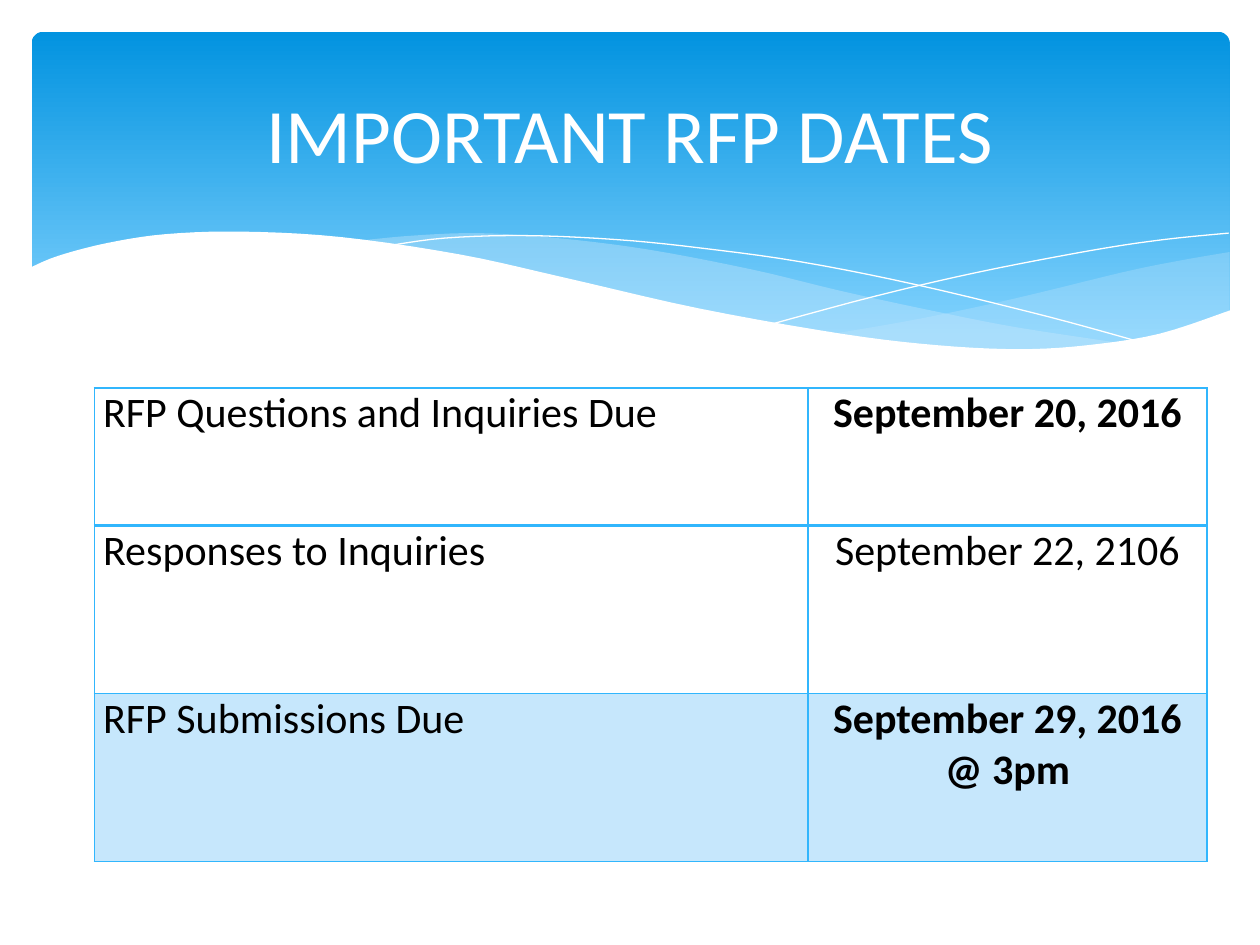
import pptx
import pptx.util
import pptx.dml.color
import pptx.enum.shapes
import pptx.enum.text
import pptx.oxml
import pptx.oxml.ns
from dataclasses import dataclass

Cm = pptx.util.Cm
Pt = pptx.util.Pt
RGB = pptx.dml.color.RGBColor.from_string
ALIGN = pptx.enum.text.PP_ALIGN
ANCHOR = pptx.enum.text.MSO_ANCHOR
NS = pptx.oxml.ns.nsdecls("a")


@dataclass(frozen=True)
class Theme:
    font: str = "Calibri"
    title_size: int = 44
    cell_size: int = 24
    sky_top: str = "0293E0"
    sky_bottom: str = "83D3FE"
    pale: str = "C6E7FC"
    white: str = "FFFFFF"
    black: str = "000000"
    border: str = "31B6FD"
    thin: float = 1
    thick: float = 2


def assign(obj, values):
    for name, value in values.items():
        setattr(obj, name, value)


def smooth(knots, steps=5):
    padded = [knots[0], *knots, knots[-1]]
    points = [knots[0]]
    for a, b, c, d in zip(padded, padded[1:], padded[2:], padded[3:]):
        for i in range(1, steps + 1):
            t = i / steps
            points.append(tuple(
                0.5 * (2 * q + (r - p) * t + (2 * p - 5 * q + 4 * r - s) * t ** 2
                       + (3 * q - p - 3 * r + s) * t ** 3)
                for p, q, r, s in zip(a, b, c, d)))
    return points


class SlideBuilder:
    def __init__(self, slide, theme):
        self.slide = slide
        self.theme = theme

    def label(self, tf, text, size, color, bold=False, align=ALIGN.LEFT):
        p = tf.paragraphs[0]
        p.alignment = align
        r = p.add_run()
        r.text = text
        assign(r.font, {"name": self.theme.font, "size": Pt(size), "bold": bold})
        r.font.color.rgb = RGB(color)

    def banner(self, left, top, width, height):
        sp = self.slide.shapes.add_shape(
            pptx.enum.shapes.MSO_SHAPE.ROUNDED_RECTANGLE,
            Cm(left), Cm(top), Cm(width), Cm(height))
        sp.adjustments[0] = 0.034
        sp.shadow.inherit = False
        sp.line.fill.background()
        sp.fill.gradient()
        sp.fill.gradient_angle = 270
        stops = [(0, self.theme.sky_top), (0.9, self.theme.sky_bottom)]
        for stop, (position, color) in zip(sp.fill.gradient_stops, stops):
            stop.position = position
            stop.color.rgb = RGB(color)

    def outline(self, points, close):
        points = [(Cm(x), Cm(y)) for x, y in points]
        builder = self.slide.shapes.build_freeform(*points[0])
        builder.add_line_segments(points[1:], close=close)
        sp = builder.convert_to_shape()
        sp.shadow.inherit = False
        return sp

    def wave(self, points, color, alpha=100):
        sp = self.outline(points, True)
        sp.line.fill.background()
        sp.fill.solid()
        sp.fill.fore_color.rgb = RGB(color)
        if alpha < 100:
            clr = sp.element.spPr.find(".//" + pptx.oxml.ns.qn("a:srgbClr"))
            clr.append(pptx.oxml.parse_xml(f'<a:alpha {NS} val="{alpha * 1000}"/>'))

    def curve(self, knots):
        sp = self.outline(smooth(knots), False)
        sp.fill.background()
        sp.line.color.rgb = RGB(self.theme.white)
        sp.line.width = Pt(0)

    def title(self, text, left, top, width, height):
        sp = self.slide.shapes.add_textbox(Cm(left), Cm(top), Cm(width), Cm(height))
        assign(sp.text_frame, {"word_wrap": True, "vertical_anchor": ANCHOR.MIDDLE})
        self.label(sp.text_frame, text, self.theme.title_size, self.theme.white,
                   align=ALIGN.CENTER)

    def borders(self, cell, widths):
        tcPr = cell._tc.get_or_add_tcPr()
        for side, width in zip("LRTB", widths):
            tcPr.append(pptx.oxml.parse_xml(
                f'<a:ln{side} {NS} w="{int(Pt(width))}"><a:solidFill>'
                f'<a:srgbClr val="{self.theme.border}"/></a:solidFill></a:ln{side}>'))

    def table(self, left, top, cols, heights, rows):
        th = self.theme
        table = self.slide.shapes.add_table(
            len(rows), len(cols), Cm(left), Cm(top),
            Cm(sum(cols)), Cm(sum(heights))).table
        assign(table, {"first_row": False, "horz_banding": False})
        for col, width in zip(table.columns, cols):
            col.width = Cm(width)
        for i, (event, date, bold, fill) in enumerate(rows):
            table.rows[i].height = Cm(heights[i])
            above = th.thick if i == 1 else th.thin
            below = th.thick if i == 0 else th.thin
            formats = [(event, False, ALIGN.LEFT), (date, bold, ALIGN.CENTER)]
            for cell, (text, strong, align) in zip(table.rows[i].cells, formats):
                assign(cell, {"margin_left": Cm(0.18), "margin_right": Cm(0.18),
                              "margin_top": 0, "margin_bottom": 0})
                self.borders(cell, (th.thin, th.thin, above, below))
                if fill:
                    cell.fill.solid()
                    cell.fill.fore_color.rgb = RGB(fill)
                else:
                    cell.fill.background()
                self.label(cell.text_frame, text, th.cell_size, th.black, strong, align)


RIGHT_TOP = [(16.79, 6.73), (18.52, 6.43), (20.45, 6.02), (22.63, 5.49),
             (23.75, 5.26), (24.79, 5.08)]
RIGHT_BOTTOM = [(24.79, 6.27), (23.75, 6.65), (22.58, 6.91), (20.68, 7.06),
                (18.92, 6.99), (16.79, 6.73)]
BAND_TOP = [(7.26, 4.85), (8.33, 4.75), (9.65, 4.7), (11.23, 4.8), (13.06, 5.03),
            (15.19, 5.44), (16.97, 5.87), (18.82, 6.27), (20.5, 6.6), (22.68, 6.93)]
BAND_BOTTOM = [(22.68, 6.93), (21.54, 7.04), (20.5, 7.06), (19, 7.01), (17.27, 6.81),
               (15.27, 6.48), (13.46, 6.1), (11.4, 5.64), (9.73, 5.26), (8.2, 4.98),
               (7.26, 4.85)]
FALLING_LINE = [(7.85, 4.95), (8.97, 4.8), (10.57, 4.75), (12.42, 4.83), (14.12, 5),
                (16.15, 5.28), (18.47, 5.74), (21.11, 6.38), (23.04, 6.91)]
RISING_LINE = [(15.57, 6.53), (17.65, 5.97), (19.71, 5.49), (22, 5.05),
               (23.47, 4.83), (24.77, 4.7)]
FRONT_TOP = [(0.58, 5.41), (1.17, 5.16), (2.16, 4.9), (3.35, 4.72), (4.9, 4.67),
             (6.88, 4.78), (9.27, 5.13), (11.35, 5.59), (14.1, 6.22), (16.97, 6.73),
             (18.9, 6.96), (20.55, 7.04), (21.92, 6.96), (23.37, 6.73), (24.82, 6.25)]
FRONT_BASE = [(24.82, 8.36), (0.58, 8.36)]


def main():
    prs = pptx.Presentation()
    assign(prs, {"slide_width": Cm(25.4), "slide_height": Cm(19.05)})
    th = Theme()
    s = SlideBuilder(prs.slides.add_slide(prs.slide_layouts[6]), th)
    s.banner(0.64, 0.64, 24.15, 6.86)
    s.wave(smooth(RIGHT_TOP) + smooth(RIGHT_BOTTOM), th.pale, 29)
    s.wave(smooth(BAND_TOP) + smooth(BAND_BOTTOM), th.pale, 40)
    s.curve(FALLING_LINE)
    s.curve(RISING_LINE)
    s.wave(smooth(FRONT_TOP) + FRONT_BASE, th.white)
    s.title("IMPORTANT RFP DATES", 1.27, 0.94, 22.86, 3.48)
    s.table(1.9, 7.82, [14.39, 8.04], [2.77, 3.39, 3.39], [
        ("RFP Questions and Inquiries Due", "September 20, 2016", True, None),
        ("Responses to Inquiries", "September 22, 2106", False, None),
        ("RFP Submissions Due", "September 29, 2016 @ 3pm", True, th.pale),
    ])
    prs.save("out.pptx")


if __name__ == "__main__":
    main()
